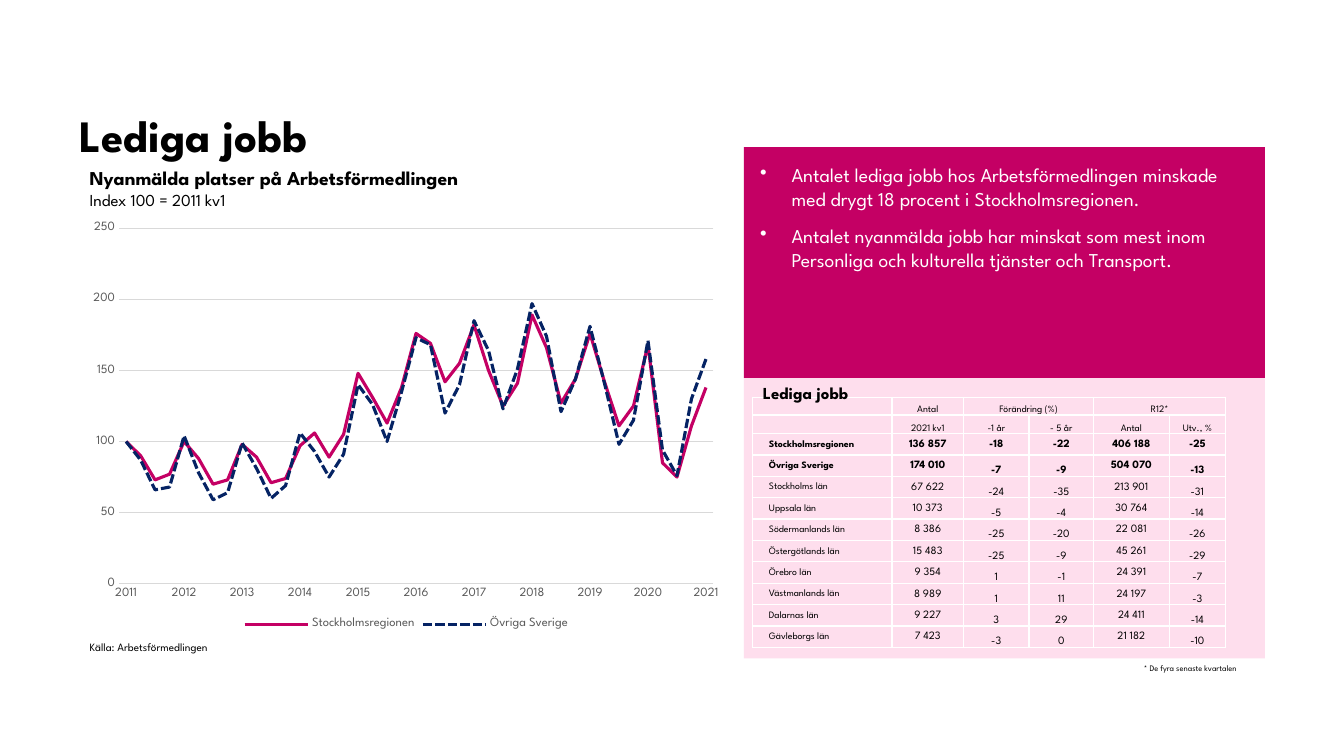
"""Build the slide on vacant jobs in the Stockholm region."""
import lxml.etree
import pptx
import pptx.chart.data
import pptx.dml.color
import pptx.enum.chart
import pptx.enum.dml
import pptx.enum.shapes
import pptx.enum.text
import pptx.oxml
import pptx.oxml.ns
import pptx.util

Pt = pptx.util.Pt
ANCHOR = pptx.enum.text.MSO_ANCHOR
ALIGN = pptx.enum.text.PP_ALIGN
FONT = "League Spartan"
COLORS = {
    "black": "000000",
    "white": "FFFFFF",
    "magenta": "C40064",
    "pink": "FEDEED",
    "navy": "052364",
    "grey": "595959",
    "grid": "D9D9D9",
}
BULLETS = [
    "Antalet lediga jobb hos Arbetsförmedlingen minskade med drygt 18 procent i Stockholmsregionen.",
    "Antalet nyanmälda jobb har minskat som mest inom Personliga och kulturella tjänster och Transport.",
]
TABLE_ROWS = [
    ["", "Antal", "Förändring (%)", "", "R12*", ""],
    ["", "2021 kv1", "-1 år", "- 5 år", "Antal", "Utv., %"],
    ["Stockholmsregionen", "136 857", "-18", "-22", "406 188", "-25"],
    ["Övriga Sverige", "174 010", "-7", "-9", "504 070", "-13"],
    ["Stockholms län", "67 622", "-24", "-35", "213 901", "-31"],
    ["Uppsala län", "10 373", "-5", "-4", "30 764", "-14"],
    ["Södermanlands län", "8 386", "-25", "-20", "22 081", "-26"],
    ["Östergötlands län", "15 483", "-25", "-9", "45 261", "-29"],
    ["Örebro län", "9 354", "1", "-1", "24 391", "-7"],
    ["Västmanlands län", "8 989", "1", "11", "24 197", "-3"],
    ["Dalarnas län", "9 227", "3", "29", "24 411", "-14"],
    ["Gävleborgs län", "7 423", "-3", "0", "21 182", "-10"],
]
COLUMN_WIDTHS = [99.4, 51.1, 46.8, 46.1, 54, 40.3]
ROW_HEIGHTS = [12.8, 13.2] + [15.3] * 10
QUARTERS = [str(2011 + index // 4) if index % 4 == 0 else "" for index in range(41)]
JOB_INDEX = {
    "Stockholmsregionen": [
        100, 90, 73, 77, 100, 88, 70, 73, 98, 89, 71, 74, 97, 106, 89, 105, 148, 131, 113, 138, 176,
        169, 142, 155, 182, 150, 125, 141, 189, 166, 127, 144, 176, 142, 111, 125, 168, 85, 75, 111, 138],
    "Övriga Sverige": [
        100, 87, 66, 68, 104, 78, 59, 64, 99, 81, 60, 69, 106, 93, 75, 91, 140, 126, 100, 135, 173,
        168, 120, 140, 185, 164, 123, 151, 197, 174, 121, 144, 181, 141, 98, 115, 171, 94, 76, 130, 158],
}


def rgb(name):
    """Return the named colour."""
    return pptx.dml.color.RGBColor.from_string(COLORS[name])


def style_font(font, size, color="black", bold=False):
    """Set typeface, size, colour and weight."""
    font.name, font.size, font.bold = FONT, Pt(size), bold
    font.color.rgb = rgb(color)


def add_label(slide, box, text, styles, wrap=False, inset=None, anchor=ANCHOR.TOP):
    """Add a text box whose lines take one (size, bold) style each."""
    shape = slide.shapes.add_textbox(*map(Pt, box))
    frame = shape.text_frame
    frame.word_wrap, frame.vertical_anchor = wrap, anchor
    if inset is not None:
        set_margins(frame, inset, inset, inset, inset)
    paragraph = frame.paragraphs[0]
    paragraph.text = text
    for run, (size, bold) in zip(paragraph.runs, styles):
        style_font(run.font, size, bold=bold)


def set_margins(holder, left, top, right, bottom):
    """Set the inner margins of a text frame or cell."""
    holder.margin_left, holder.margin_top = Pt(left), Pt(top)
    holder.margin_right, holder.margin_bottom = Pt(right), Pt(bottom)


def add_panel(slide, box, color):
    """Add a filled rectangle without outline."""
    shape = slide.shapes.add_shape(pptx.enum.shapes.MSO_SHAPE.RECTANGLE, *map(Pt, box))
    shape.shadow.inherit = False
    shape.fill.solid()
    shape.fill.fore_color.rgb = rgb(color)
    shape.line.fill.background()
    return shape


def write_bullets(frame, texts):
    """Fill a text frame with bulleted paragraphs."""
    frame.word_wrap, frame.vertical_anchor = True, ANCHOR.TOP
    set_margins(frame, 11.5, 11.5, 11.5, 11.5)
    for index, text in enumerate(texts):
        paragraph = frame.add_paragraph() if index else frame.paragraphs[0]
        paragraph.text = text
        paragraph.alignment = ALIGN.LEFT
        paragraph.space_before = Pt(10 if index else 0)
        properties = paragraph._p.get_or_add_pPr()
        properties.set("marL", str(Pt(22.5)))
        properties.set("indent", str(-Pt(22.5)))
        bullet = lxml.etree.SubElement(properties, pptx.oxml.ns.qn("a:buChar"))
        bullet.set("char", "•")
        style_font(paragraph.runs[0].font, 14, "white")


def fill_cell(cell, text, row, column):
    """Write and format one table cell."""
    cell.fill.background()
    set_margins(cell, 11.5 if column == 0 else 0.7, 0.7, 0.7, 0)
    at_bottom = row < 2 or (row > 2 and column in (2, 3, 5))
    cell.vertical_anchor = ANCHOR.BOTTOM if at_bottom else ANCHOR.MIDDLE
    paragraph = cell.text_frame.paragraphs[0]
    paragraph.text = text
    paragraph.alignment = ALIGN.LEFT if column == 0 else ALIGN.CENTER
    for run in paragraph.runs:
        style_font(run.font, 7 if row < 2 or column == 0 else 8, bold=row in (2, 3))
    if not text:
        end = lxml.etree.SubElement(paragraph._p, pptx.oxml.ns.qn("a:endParaRPr"))
        end.set("sz", "700")


def add_jobs_table(slide):
    """Add the table of jobs by region."""
    box = (537.8, 283.7, sum(COLUMN_WIDTHS), sum(ROW_HEIGHTS))
    table = slide.shapes.add_table(len(TABLE_ROWS), len(COLUMN_WIDTHS), *map(Pt, box)).table
    table.first_row = table.horz_banding = False
    for column, width in zip(table.columns, COLUMN_WIDTHS):
        column.width = Pt(width)
    for row, height in zip(table.rows, ROW_HEIGHTS):
        row.height = Pt(height)
    for row, texts in enumerate(TABLE_ROWS):
        for column, text in enumerate(texts):
            fill_cell(table.cell(row, column), text, row, column)
    for column in (2, 4):
        table.cell(0, column).merge(table.cell(0, column + 1))


def style_axes(chart):
    """Format both axes and the gridlines."""
    values, categories = chart.value_axis, chart.category_axis
    for axis in (values, categories):
        axis.major_tick_mark = axis.minor_tick_mark = pptx.enum.chart.XL_TICK_MARK.NONE
        style_font(axis.tick_labels.font, 9, "grey")
    values.minimum_scale, values.maximum_scale, values.major_unit = 0, 250, 50
    values.format.line.fill.background()
    for line in (values.major_gridlines.format.line, categories.format.line):
        line.color.rgb, line.width = rgb("grid"), Pt(0.75)
    body = categories._element.find(".//" + pptx.oxml.ns.qn("a:bodyPr"))
    body.set("rot", "-60000000")


def place_plot(chart, fractions):
    """Fix the inner plot area as fractions of the chart."""
    area = chart._chartSpace.chart.plotArea
    for old in area.findall(pptx.oxml.ns.qn("c:layout")):
        area.remove(old)
    parts = "".join(f'<c:{key} val="{value}"/>' for key, value in fractions.items())
    area.insert(0, pptx.oxml.parse_xml(
        f'<c:layout {pptx.oxml.ns.nsdecls("c")}><c:manualLayout><c:layoutTarget val="inner"/>'
        f'<c:xMode val="edge"/><c:yMode val="edge"/>{parts}</c:manualLayout></c:layout>'))


def add_jobs_chart(slide):
    """Add the line chart of newly reported jobs."""
    data = pptx.chart.data.CategoryChartData()
    data.categories = QUARTERS
    for name, values in JOB_INDEX.items():
        data.add_series(name, values)
    box = map(Pt, (56.9, 154.1, 466.6, 298.8))
    chart = slide.shapes.add_chart(pptx.enum.chart.XL_CHART_TYPE.LINE, *box, data).chart
    style_font(chart.font, 10)
    chart.has_title = False
    chart.has_legend = True
    chart.legend.position = pptx.enum.chart.XL_LEGEND_POSITION.BOTTOM
    chart.legend.include_in_layout = False
    style_font(chart.legend.font, 9, "grey")
    chart.plots[0].vary_by_categories = False
    for series, color in zip(chart.plots[0].series, ("magenta", "navy")):
        series.smooth = False
        series.marker.style = pptx.enum.chart.XL_MARKER_STYLE.NONE
        series.format.line.color.rgb, series.format.line.width = rgb(color), Pt(2.25)
    series.format.line.dash_style = pptx.enum.dml.MSO_LINE.SQUARE_DOT
    style_axes(chart)
    place_plot(chart, {"x": 0.06, "y": 0.03, "w": 0.91, "h": 0.85})


def main():
    """Build and save the slide."""
    presentation = pptx.Presentation()
    presentation.slide_width, presentation.slide_height = Pt(960), Pt(540)
    slide = presentation.slides.add_slide(presentation.slide_layouts[6])
    add_label(slide, (56.9, 27.4, 663.8, 87.8), "Lediga jobb", [(32, True)], True, 0, ANCHOR.BOTTOM)
    add_label(slide, (56.9, 453.6, 118, 17), "Källa: Arbetsförmedlingen", [(8, False)])
    add_panel(slide, (531.4, 270, 372.2, 200.2), "pink")
    write_bullets(add_panel(slide, (531.4, 105.1, 372.2, 164.9), "magenta").text_frame, BULLETS)
    add_label(slide, (810, 470.2, 92.9, 14.4), "* De fyra senaste kvartalen", [(6, False)])
    add_label(slide, (56.9, 115.2, 306.7, 38.9),
              "Nyanmälda platser på Arbetsförmedlingen\vIndex 100 = 2011 kv1", [(14, True), (12, False)])
    add_jobs_table(slide)
    add_label(slide, (537.8, 270, 80.6, 21.6), "Lediga jobb", [(12, True)])
    add_jobs_chart(slide)
    presentation.save("out.pptx")


if __name__ == "__main__":
    main()
